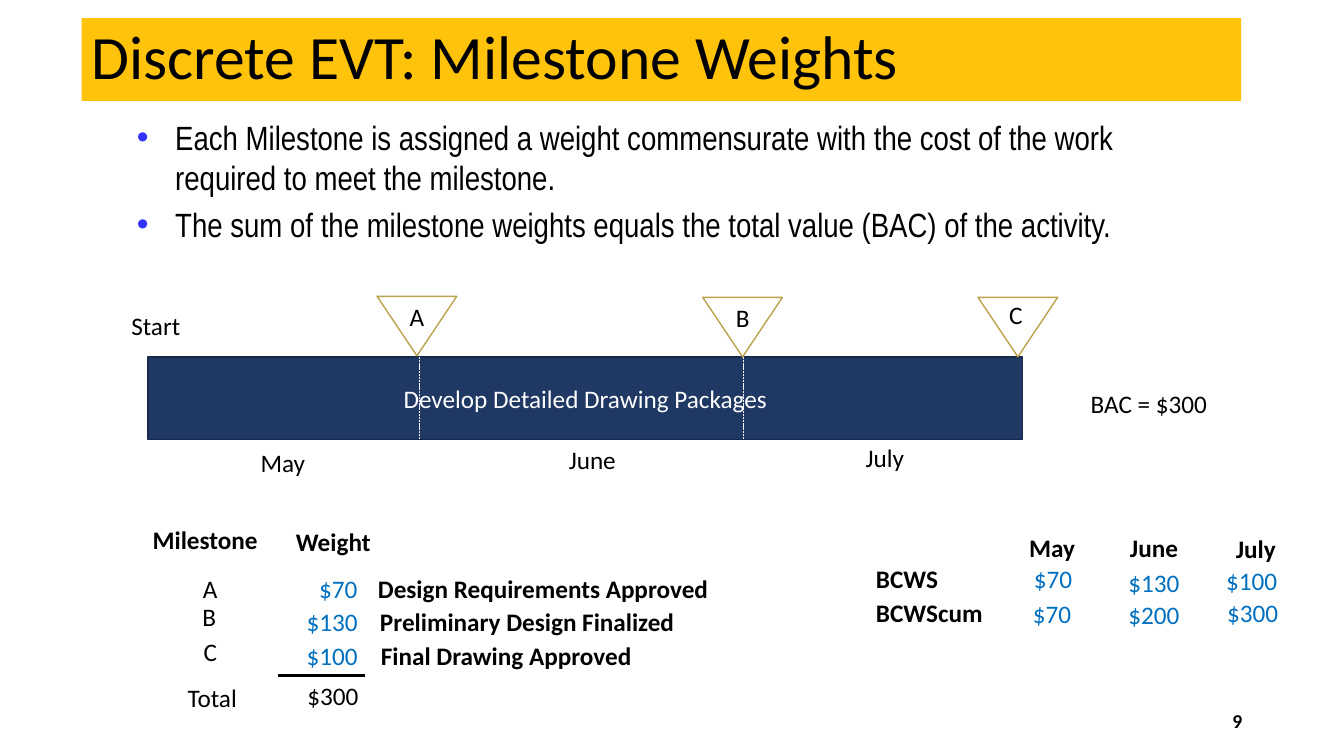
from dataclasses import dataclass

from lxml.etree import SubElement
from pptx import Presentation
from pptx.dml.color import RGBColor
from pptx.enum.dml import MSO_LINE
from pptx.enum.shapes import MSO_CONNECTOR, MSO_SHAPE
from pptx.enum.text import MSO_ANCHOR, MSO_AUTO_SIZE, PP_ALIGN
from pptx.oxml.ns import qn
from pptx.util import Emu, Pt

PX = 9144  # 100 px to the inch
BLACK, WHITE, BLUE = "000000", "FFFFFF", "0070C0"
NAVY, NAVY_EDGE, GOLD, YELLOW = "1F3864", "17294A", "BDA14B", "FFC30C"
LEFT, CENTER, RIGHT = PP_ALIGN.LEFT, PP_ALIGN.CENTER, PP_ALIGN.RIGHT
LABEL_HEIGHT, CELL_WIDTH = 40, 99
BAR_LEFT, BAR_TOP, BAR_WIDTH, BAR_HEIGHT = 147, 354, 867, 82


@dataclass
class Label:
    text: str
    left: int
    top: int
    width: int = CELL_WIDTH
    color: str = BLACK
    bold: bool = False
    align: PP_ALIGN = CENTER


@dataclass
class Milestone:
    name: str
    marker_left: int
    marker_top: int
    letter_left: int
    letter_top: int
    name_left: int
    name_top: int
    weight: str
    weight_left: int
    meaning: str
    meaning_left: int


@dataclass
class Month:
    name: str
    axis_left: int
    axis_top: int
    head_left: int
    head_top: int
    bcws: Label
    cumulative: Label


MILESTONES = [
    Milestone("A", 374, 294, 381, 294, 159, 564, "$70", 286,
              "Design Requirements Approved", 365),
    Milestone("B", 697, 295, 704, 295, 158, 592, "$130", 280,
              "Preliminary Design Finalized", 367),
    Milestone("C", 970, 295, 975, 292, 159, 626, "$100", 280,
              "Final Drawing Approved", 368),
]
MONTHS = [
    Month("May", 212, 439, 994, 523,
          Label("$70", 995, 554, color=BLUE), Label("$70", 994, 589, color=BLUE)),
    Month("June", 519, 436, 1095, 523,
          Label("$130", 1095, 558, color=BLUE), Label("$200", 1095, 590, color=BLUE)),
    Month("July", 809, 434, 1196, 524,
          Label("$100", 1192, 556, color=BLUE), Label("$300", 1193, 588, color=BLUE)),
]
FIXED_LABELS = [
    Label("Start", 105, 303),
    Label("BAC = $300", 1072, 380, 137, align=LEFT),
    Label("Milestone", 137, 515, 133, bold=True),
    Label("Weight", 281, 517, bold=True),
    Label("Total", 161, 672),
    Label("$300", 295, 670, 75, align=LEFT),
    Label("BCWS", 859, 554, 133, bold=True, align=LEFT),
    Label("BCWScum", 859, 588, 133, bold=True, align=LEFT),
]
BULLETS = [
    "Each Milestone is assigned a weight commensurate with the cost of the work "
    "required to meet the milestone.",
    "The sum of the milestone weights equals the total value (BAC) of the activity.",
]


def rgb(color: str) -> RGBColor:
    return RGBColor.from_string(color)


def box(left: int, top: int, width: int, height: int) -> list[Emu]:
    return [Emu(length * PX) for length in (left, top, width, height)]


def format_text(frame, size: int, color: str, align=LEFT, bold=False, font="Calibri") -> None:
    frame.word_wrap = True
    for paragraph in frame.paragraphs:
        paragraph.alignment = align
        for run in paragraph.runs:
            run.font.name, run.font.size = font, Pt(size)
            run.font.bold, run.font.color.rgb = bold, rgb(color)


def add_label(slide, label: Label, size: int = 18) -> None:
    frame = slide.shapes.add_textbox(
        *box(label.left, label.top, label.width, LABEL_HEIGHT)).text_frame
    frame.text = label.text
    frame.auto_size = MSO_AUTO_SIZE.SHAPE_TO_FIT_TEXT
    format_text(frame, size, label.color, label.align, label.bold)


def add_line(slide, start: tuple[int, int], end: tuple[int, int],
             color: str, width: float, dash=None) -> None:
    line = slide.shapes.add_connector(
        MSO_CONNECTOR.STRAIGHT, *(Emu(length * PX) for length in (*start, *end)))
    line.line.color.rgb, line.line.width = rgb(color), Pt(width)
    if dash:
        line.line.dash_style = dash
    SubElement(line._element.spPr, qn("a:effectLst"))


def add_title(slide) -> None:
    title = slide.shapes.title
    title.left, title.top, title.width, title.height = box(81, 18, 1150, 82)
    title.fill.solid()
    title.fill.fore_color.rgb = rgb(YELLOW)
    frame = title.text_frame
    frame.text = "Discrete EVT: Milestone Weights"
    frame.auto_size = MSO_AUTO_SIZE.NONE
    frame.vertical_anchor = MSO_ANCHOR.MIDDLE
    frame.paragraphs[0].line_spacing = 0.9
    format_text(frame, 44, BLACK)


def add_bullets(slide) -> None:
    frame = slide.shapes.add_textbox(*box(126, 111, 1093, 139)).text_frame
    frame.text = "\n".join(BULLETS)
    format_text(frame, 24, BLACK, font="Arial Narrow")
    for paragraph in frame.paragraphs:
        paragraph.space_before = Pt(4.8)
        properties = paragraph._p.get_or_add_pPr()
        properties.set("marL", str(38 * PX))
        properties.set("indent", str(-38 * PX))
        bullet_color = SubElement(properties, qn("a:buClr"))
        SubElement(bullet_color, qn("a:srgbClr"), val="3333FF")
        SubElement(properties, qn("a:buFont"), typeface="Arial")
        SubElement(properties, qn("a:buChar"), char="•")


def add_activity_bar(slide) -> None:
    bar = slide.shapes.add_shape(
        MSO_SHAPE.RECTANGLE, *box(BAR_LEFT, BAR_TOP, BAR_WIDTH, BAR_HEIGHT))
    bar.shadow.inherit = False
    bar.fill.solid()
    bar.fill.fore_color.rgb = rgb(NAVY)
    bar.line.color.rgb, bar.line.width = rgb(NAVY_EDGE), Pt(1)
    bar.text_frame.text = "Develop Detailed Drawing Packages"
    bar.text_frame.vertical_anchor = MSO_ANCHOR.MIDDLE
    format_text(bar.text_frame, 18, WHITE, CENTER)
    for month_end in (416, 737):
        add_line(slide, (month_end, BAR_TOP), (month_end, BAR_TOP + BAR_HEIGHT),
                 "F2F2F2", 0.5, MSO_LINE.SQUARE_DOT)


def add_milestone(slide, milestone: Milestone, row_top: int) -> None:
    marker = slide.shapes.add_shape(
        MSO_SHAPE.ISOSCELES_TRIANGLE,
        *box(milestone.marker_left, milestone.marker_top, 79, 59))
    marker.rotation = 180
    marker.shadow.inherit = False
    marker.fill.background()
    marker.line.color.rgb, marker.line.width = rgb(GOLD), Pt(1)
    for label in (
        Label(milestone.name, milestone.letter_left, milestone.letter_top, 65),
        Label(milestone.name, milestone.name_left, milestone.name_top),
        Label(milestone.weight, milestone.weight_left, row_top, color=BLUE),
        Label(milestone.meaning, milestone.meaning_left, row_top, 404, bold=True, align=LEFT),
    ):
        add_label(slide, label)


def add_month(slide, month: Month) -> None:
    for label in (
        Label(month.name, month.axis_left, month.axis_top, 137),
        Label(month.name, month.head_left, month.head_top, bold=True),
        month.bcws,
        month.cumulative,
    ):
        add_label(slide, label)


def main() -> None:
    deck = Presentation()
    deck.slide_width, deck.slide_height = Emu(1333 * PX), Emu(750 * PX)
    slide = deck.slides.add_slide(deck.slide_layouts[5])

    # Heading and explanation
    add_title(slide)
    add_bullets(slide)

    # Timeline, milestone weights and monthly budget
    add_activity_bar(slide)
    for row, milestone in enumerate(MILESTONES):
        add_milestone(slide, milestone, 564 + 33 * row)
    for month in MONTHS:
        add_month(slide, month)
    for label in FIXED_LABELS:
        add_label(slide, label)

    # Sum rule above the total
    add_line(slide, (276, 670), (362, 670), BLACK, 2.25)

    # Page number
    add_label(slide, Label("9", 942, 698, 300, bold=True, align=RIGHT), size=14)
    deck.save("out.pptx")


if __name__ == "__main__":
    main()
